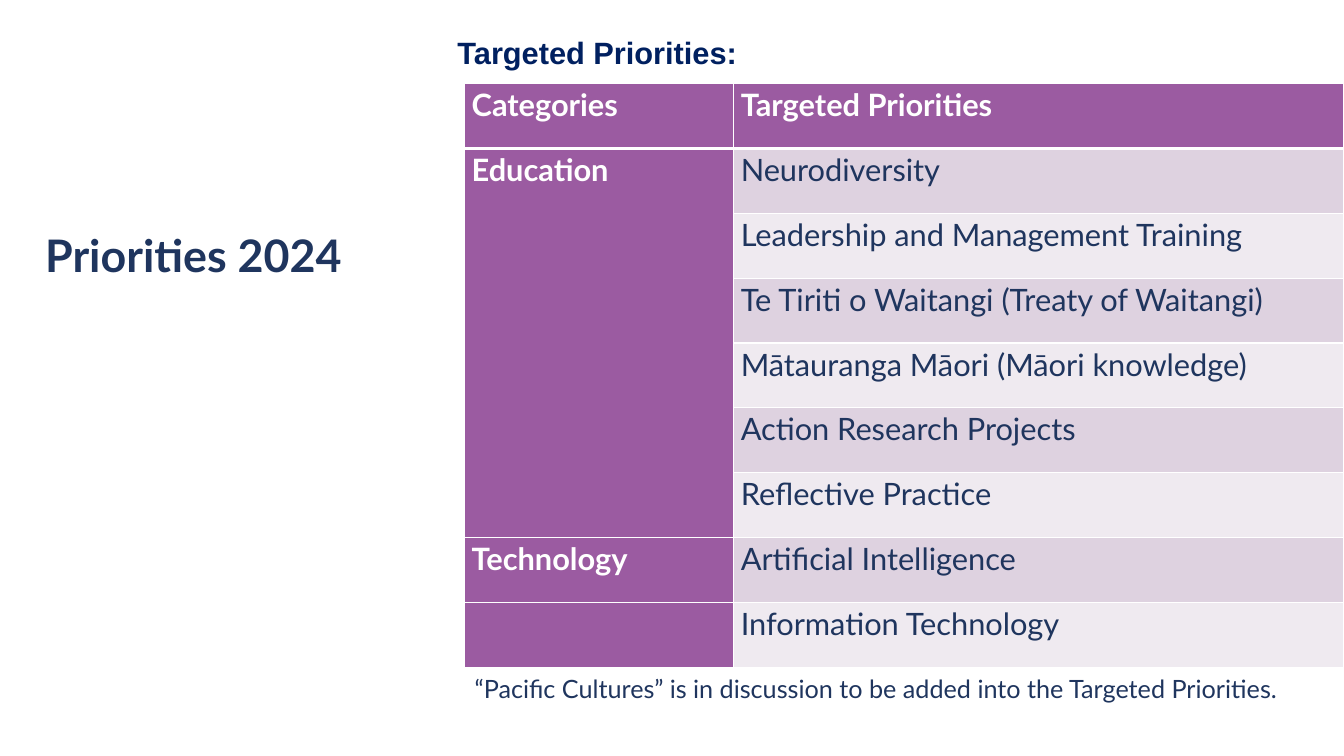
from dataclasses import dataclass

from lxml import etree
from pptx import Presentation
from pptx.dml.color import RGBColor
from pptx.enum.text import MSO_ANCHOR
from pptx.oxml.ns import qn
from pptx.slide import Slide
from pptx.table import _Cell
from pptx.text.text import TextFrame
from pptx.util import Pt

TOP = MSO_ANCHOR.TOP
BOTTOM = MSO_ANCHOR.BOTTOM

COLORS = {
    "white": "FFFFFF",
    "ink": "1F355E",
    "navy": "002060",
    "purple": "9B5BA1",
    "band_dark": "DED2E0",
    "band_light": "EFEAF0",
}

COLUMN_WIDTHS = (192.24, 435.6)
ROW_HEIGHT = 46.32
THIN, THICK = 1, 3
HEADER = ("Categories", "Targeted Priorities")
PRIORITIES = {
    "Education": (
        "Neurodiversity",
        "Leadership and Management Training",
        "Te Tiriti o Waitangi (Treaty of Waitangi)",
        "Mātauranga Māori (Māori knowledge)",
        "Action Research Projects",
        "Reflective Practice",
    ),
    "Technology": ("Artificial Intelligence", "Information Technology"),
}
MERGED_CATEGORIES = {"Education"}


@dataclass(frozen=True)
class TextStyle:
    size: float
    color: str
    bold: bool = False
    font: str = "Lato"
    line_spacing: float = 1.0
    space_after: float = 0


@dataclass(frozen=True)
class Caption:
    text: str
    left: float
    top: float
    width: float
    height: float
    style: TextStyle
    anchor: MSO_ANCHOR = TOP


LABEL = TextStyle(22, "white", bold=True, line_spacing=1.07, space_after=8)
ENTRY = TextStyle(22, "ink", line_spacing=1.07, space_after=8)

CAPTIONS = (
    Caption("Priorities 2024", 25.2, 36, 266.4, 169.2,
            TextStyle(32, "ink", bold=True, line_spacing=0.9), BOTTOM),
    Caption("Targeted Priorities:", 319.68, 18.72, 482.4, 34.56,
            TextStyle(22, "navy", bold=True, font="Arial",
                      line_spacing=1.07, space_after=8)),
    Caption("“Pacific Cultures” is in discussion to be added into the "
            "Targeted Priorities.", 331.92, 477.36, 627.84, 123.84,
            TextStyle(18, "ink", space_after=10)),
)


def rgb(name: str) -> RGBColor:
    return RGBColor.from_string(COLORS[name])


def write(frame: TextFrame, text: str, style: TextStyle) -> None:
    paragraph = frame.paragraphs[0]
    paragraph.line_spacing = style.line_spacing
    paragraph.space_after = Pt(style.space_after)
    run = paragraph.add_run()
    run.text = text
    font_format = {"name": style.font, "size": Pt(style.size), "bold": style.bold}
    for attribute, value in font_format.items():
        setattr(run.font, attribute, value)
    run.font.color.rgb = rgb(style.color)


def add_caption(slide: Slide, caption: Caption) -> None:
    box = slide.shapes.add_textbox(Pt(caption.left), Pt(caption.top),
                                   Pt(caption.width), Pt(caption.height))
    box.text_frame.word_wrap = True
    box.text_frame.vertical_anchor = caption.anchor
    write(box.text_frame, caption.text, caption.style)


def set_borders(cell: _Cell, top: float, bottom: float) -> None:
    properties = cell._tc.get_or_add_tcPr()
    widths = {"lnL": THIN, "lnR": THIN, "lnT": top, "lnB": bottom}
    for side, width in widths.items():
        line = etree.SubElement(properties, qn(f"a:{side}"), w=str(Pt(width)))
        fill = etree.SubElement(line, qn("a:solidFill"))
        etree.SubElement(fill, qn("a:srgbClr"), val=COLORS["white"])


def format_cell(cell: _Cell, row: int, column: int) -> None:
    """Set margins, borders and the fill that the cell's place calls for."""
    margins = {"margin_left": 5.04, "margin_right": 5.04,
               "margin_top": 0, "margin_bottom": 0}
    for attribute, value in margins.items():
        setattr(cell, attribute, Pt(value))
    set_borders(cell, top=THICK if row == 1 else THIN,
                bottom=THICK if row == 0 else THIN)
    if row == 0 or column == 0:
        color = "purple"
    else:
        color = "band_dark" if row % 2 else "band_light"
    cell.fill.solid()
    cell.fill.fore_color.rgb = rgb(color)


def add_priorities_table(slide: Slide, left: float, top: float) -> None:
    row_count = 1 + sum(len(entries) for entries in PRIORITIES.values())
    table = slide.shapes.add_table(
        row_count, len(HEADER), Pt(left), Pt(top),
        Pt(sum(COLUMN_WIDTHS)), Pt(ROW_HEIGHT * row_count)).table
    for column, width in zip(table.columns, COLUMN_WIDTHS):
        column.width = Pt(width)
    for index, row in enumerate(table.rows):
        row.height = Pt(ROW_HEIGHT)
        for position, cell in enumerate(row.cells):
            format_cell(cell, index, position)

    for position, heading in enumerate(HEADER):
        write(table.cell(0, position).text_frame, heading, LABEL)
    first = 1
    for category, entries in PRIORITIES.items():
        write(table.cell(first, 0).text_frame, category, LABEL)
        for index, entry in enumerate(entries, first):
            write(table.cell(index, 1).text_frame, entry, ENTRY)
        last = first + len(entries) - 1
        if category in MERGED_CATEGORIES:
            table.cell(first, 0).merge(table.cell(last, 0))
        first = last + 1


def main() -> None:
    presentation = Presentation()
    presentation.slide_width = Pt(960)
    presentation.slide_height = Pt(540)
    slide = presentation.slides.add_slide(presentation.slide_layouts[6])
    for caption in CAPTIONS:
        add_caption(slide, caption)
    add_priorities_table(slide, 331.92, 59.76)
    presentation.save("out.pptx")


if __name__ == "__main__":
    main()
